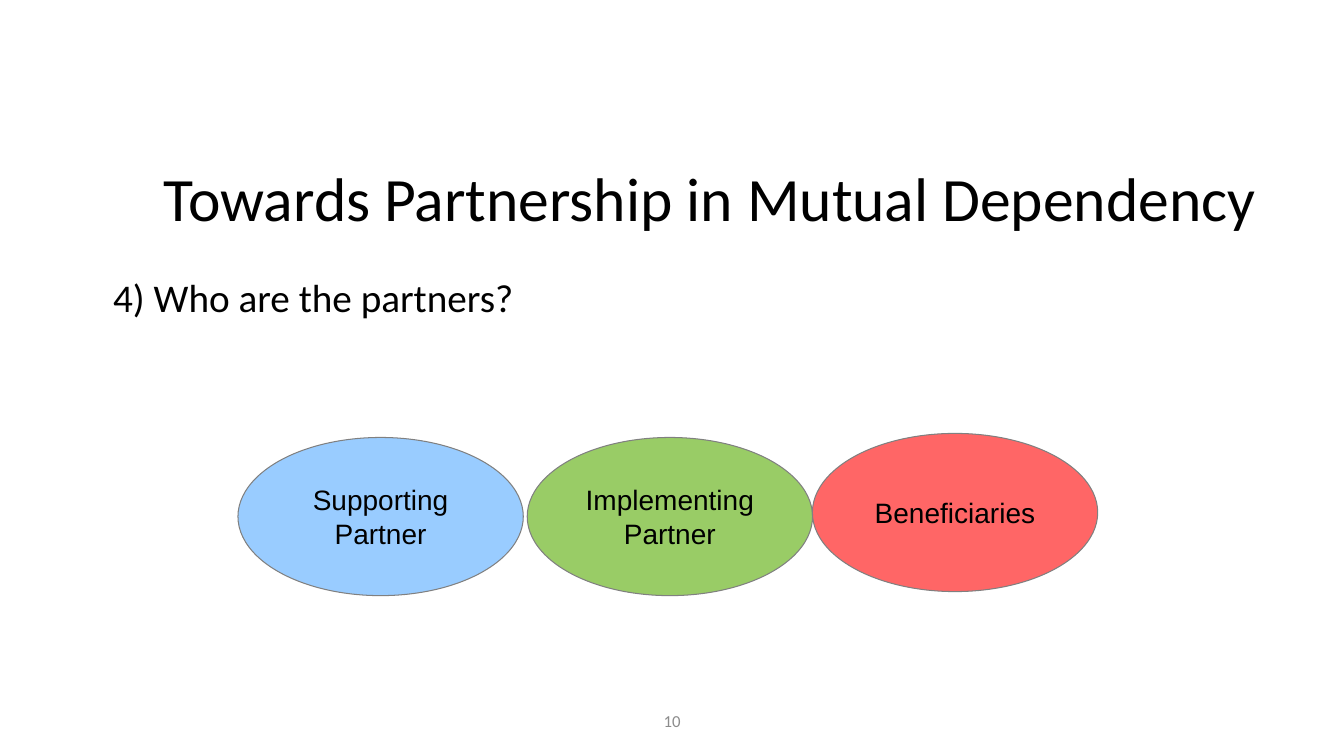
import pptx
import pptx.util
import pptx.dml.color
import pptx.enum.shapes
import pptx.enum.text

Pt = pptx.util.Pt
RGB = pptx.dml.color.RGBColor.from_string
ALIGN = pptx.enum.text.PP_ALIGN
ANCHOR = pptx.enum.text.MSO_ANCHOR

# Content
TITLE = "Towards Partnership in Mutual Dependency"
QUESTION = "4) Who are the partners?"
PAGE_NUMBER = "10"
PARTNERS = [  # label, fill, left, top
    ("Supporting Partner", "99CCFF", 170, 312.5),
    ("Implementing Partner", "99CC66", 376.6, 312.5),
    ("Beneficiaries", "FF6666", 580.3, 309.6),
]

THEME = {
    "font": "Calibri", "label_font": "Arial",
    "text": "000000", "muted": "8C8C8C", "outline": "808080",
    "title": 44, "body": 28, "label": 20, "small": 12,
}
PARTNER_SIZE = (203.8, 113)


def write(shape, text, size, font=THEME["font"], color=THEME["text"],
          align=ALIGN.LEFT, anchor=ANCHOR.MIDDLE, spacing=1.0):
    """Put one formatted paragraph in a shape and return the paragraph."""
    tf = shape.text_frame
    tf.word_wrap = True
    tf.vertical_anchor = anchor
    tf.margin_left = tf.margin_right = Pt(7.2)
    tf.margin_top = tf.margin_bottom = Pt(3.6)
    p = tf.paragraphs[0]
    p.alignment = align
    p.line_spacing = spacing
    r = p.add_run()
    r.text = text
    r.font.name = font
    r.font.size = Pt(size)
    r.font.color.rgb = RGB(color)
    return p


def add_box(s, left, top, width, height):
    return s.shapes.add_textbox(Pt(left), Pt(top), Pt(width), Pt(height))


def add_partner(s, label, fill, left, top):
    width, height = PARTNER_SIZE
    sp = s.shapes.add_shape(pptx.enum.shapes.MSO_SHAPE.OVAL,
                            Pt(left), Pt(top), Pt(width), Pt(height))
    sp.shadow.inherit = False
    sp.fill.solid()
    sp.fill.fore_color.rgb = RGB(fill)
    sp.line.color.rgb = RGB(THEME["outline"])
    sp.line.width = Pt(0.75)
    write(sp, label, THEME["label"], font=THEME["label_font"], align=ALIGN.CENTER)


def main():
    prs = pptx.Presentation()
    prs.slide_width, prs.slide_height = Pt(960), Pt(540)
    s = prs.slides.add_slide(prs.slide_layouts[6])

    # Page number
    write(add_box(s, 318.2, 500.4, 324, 28.8), PAGE_NUMBER, THEME["small"],
          color=THEME["muted"], align=ALIGN.CENTER)

    # Title
    write(add_box(s, 77, 91.4, 828, 104.4), TITLE, THEME["title"],
          align=ALIGN.RIGHT, spacing=0.9)

    # Question with a hanging indent
    p = write(add_box(s, 64.8, 195.8, 828, 342.7), QUESTION, THEME["body"],
              anchor=ANCHOR.TOP, spacing=0.9)
    pPr = p._p.get_or_add_pPr()
    pPr.set("marL", str(Pt(51)))
    pPr.set("indent", str(Pt(-42)))

    # Partner ellipses
    for partner in PARTNERS:
        add_partner(s, *partner)

    prs.save("out.pptx")


if __name__ == "__main__":
    main()
